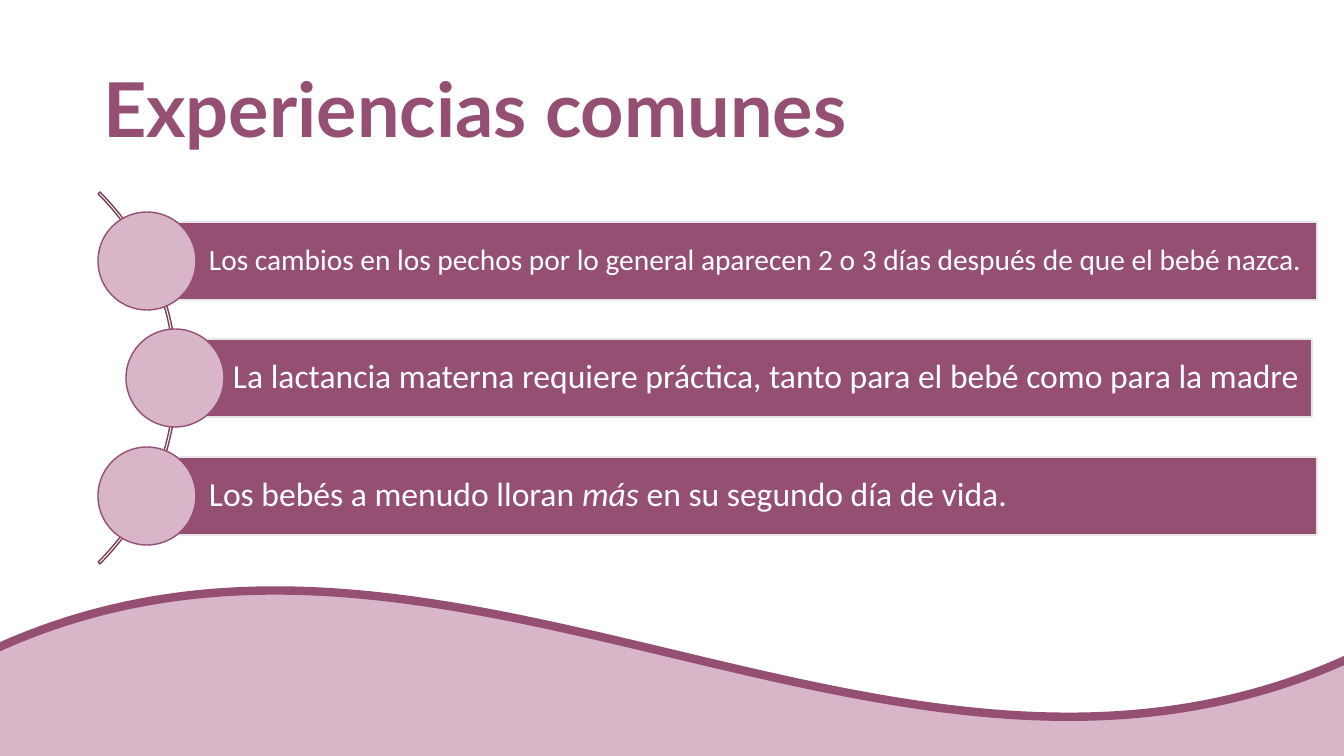
from dataclasses import dataclass
from pptx import Presentation
from pptx.dml.color import RGBColor as RGB
from pptx.enum.shapes import MSO_SHAPE as SHAPE
from pptx.enum.text import MSO_ANCHOR as ANCHOR, PP_ALIGN as ALIGN
from pptx.util import Emu, Pt


@dataclass(frozen=True)
class Theme:
    plum: RGB = RGB.from_string("954F72")
    dark_plum: RGB = RGB.from_string("773F5B")
    pink: RGB = RGB.from_string("D8B5C7")
    gray: RGB = RGB.from_string("E7E6E6")
    white: RGB = RGB.from_string("FFFFFF")
    title_font: str = "Lato"
    body_font: str = "Calibri"
    title_size: int = 54
    body_size: int = 24
    long_size: int = 21


theme = Theme()
PX = 12192000 / 1344


def add_shape(kind, box, fill, line, weight=1):
    shape = slide.shapes.add_shape(kind, *(Emu(round(v * PX)) for v in box))
    shape.shadow.inherit = False
    if fill is None:
        shape.fill.background()
    else:
        shape.fill.solid()
        shape.fill.fore_color.rgb = fill
    shape.line.color.rgb = line
    shape.line.width = Pt(weight)
    return shape


def write(paragraph, text, size, font, color, bold=False, italic=False):
    paragraph.alignment = ALIGN.LEFT
    paragraph.line_spacing = 0.9
    run = paragraph.add_run()
    run.text = text
    run.font.size = Pt(size)
    run.font.name = font
    run.font.color.rgb = color
    run.font.bold = bold
    run.font.italic = italic


deck = Presentation()
deck.slide_width = Emu(round(1344 * PX))
deck.slide_height = Emu(round(756 * PX))
slide = deck.slides.add_slide(deck.slide_layouts[5])

add_shape(SHAPE.WAVE, (-15, 588, 1374, 525), theme.pink, theme.plum, 6)

title = slide.shapes.title
title.left, title.top, title.width, title.height = (
    Emu(round(v * PX)) for v in (93, 40, 1159, 146))
title.text_frame.vertical_anchor = ANCHOR.MIDDLE
title.text_frame.word_wrap = True
write(title.text_frame.paragraphs[0], "Experiencias comunes", size=theme.title_size,
      font=theme.title_font, color=theme.plum, bold=True)

arc = add_shape(SHAPE.BLOCK_ARC, (-349, 115, 526, 526), None, theme.dark_plum)
for index, value in enumerate((189, 27, 0.005)):
    arc.adjustments[index] = value

experiences = [
    (147, 1170, 98, theme.long_size,
     ["Los cambios en los pechos por lo general aparecen 2 o 3 días después de que el bebé nazca."]),
    (171, 1141, 126, theme.body_size,
     ["La lactancia materna requiere práctica, tanto para el bebé como para la madre"]),
    (147, 1170, 98, theme.body_size,
     ["Los bebés a menudo lloran ", "más", " en su segundo día de vida."]),
]
for row, (bar_left, bar_width, circle_left, size, phrases) in enumerate(experiences):
    bar_top = 222 + 235 * row // 2
    bar = add_shape(SHAPE.RECTANGLE, (bar_left, bar_top, bar_width, 78), theme.plum, theme.gray)
    frame = bar.text_frame
    frame.word_wrap = True
    frame.vertical_anchor = ANCHOR.MIDDLE
    frame.margin_left = Emu(round(62 * PX))
    frame.margin_right = frame.margin_top = frame.margin_bottom = Emu(round(6 * PX))
    for phrase in phrases:
        write(frame.paragraphs[0], phrase, size=size, font=theme.body_font,
              color=theme.white, italic=phrase == "más")
    add_shape(SHAPE.OVAL, (circle_left, bar_top - 10, 98, 98), theme.pink, theme.plum)

deck.save("out.pptx")
